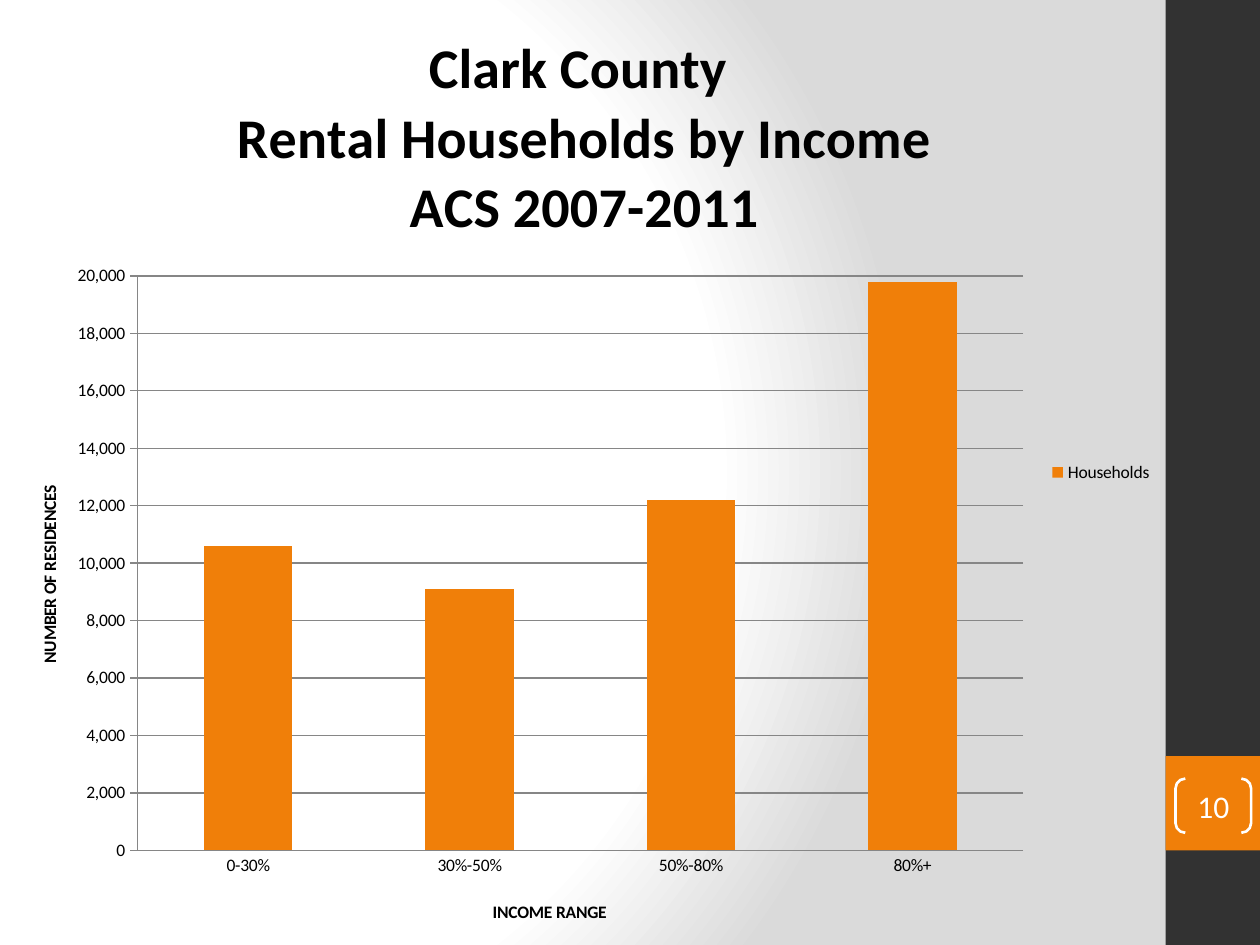
"""Build a slide with a column chart of rental households by income."""
from dataclasses import dataclass

from pptx import Presentation
from pptx.chart.data import CategoryChartData
from pptx.dml.color import RGBColor
from pptx.enum.chart import XL_CHART_TYPE, XL_LEGEND_POSITION, XL_TICK_MARK
from pptx.enum.shapes import MSO_SHAPE
from pptx.enum.text import MSO_ANCHOR, PP_ALIGN
from pptx.oxml import parse_xml
from pptx.oxml.ns import nsdecls
from pptx.util import Inches, Pt

COLUMN = XL_CHART_TYPE.COLUMN_CLUSTERED
RIGHT = XL_LEGEND_POSITION.RIGHT
NONE, OUT = XL_TICK_MARK.NONE, XL_TICK_MARK.OUTSIDE
RECT, BRACKET = MSO_SHAPE.RECTANGLE, MSO_SHAPE.DOUBLE_BRACKET
MIDDLE, CENTER = MSO_ANCHOR.MIDDLE, PP_ALIGN.CENTER


@dataclass(frozen=True)
class Theme:
    """Colours, font and type sizes."""
    font: str = "Calibri"
    ink: str = "000000"
    dark: str = "323232"
    accent: str = "F07F09"
    light: str = "FFFFFF"
    shade: str = "DADADA"
    rule: str = "868686"
    title: int = 32
    number: int = 18
    label: int = 10


def rgb(color):
    """Turn a hex string into a colour."""
    return RGBColor.from_string(color)


def style(font, name, size, color, bold=False):
    """Set the look of a font."""
    font.name, font.size, font.bold = name, Pt(size), bold
    font.color.rgb = rgb(color)


def write(frame, text, **look):
    """Put centred, formatted text in a frame."""
    frame.text = text
    for para in frame.paragraphs:
        para.alignment = CENTER
        for run in para.runs:
            style(run.font, **look)


def place(node, index, inner=False, **spots):
    """Give a chart part a manual layout in fractions of the chart."""
    for old in node.xpath("c:layout"):
        node.remove(old)
    target = '<c:layoutTarget val="inner"/>' if inner else ""
    modes = '<c:xMode val="edge"/><c:yMode val="edge"/>'
    sizes = "".join(f'<c:{key} val="{val}"/>' for key, val in spots.items())
    node.insert(index, parse_xml(
        f'<c:layout {nsdecls("c")}><c:manualLayout>{target}{modes}{sizes}'
        "</c:manualLayout></c:layout>"))


class Deck:
    """Hold the theme and the current slide."""

    def __init__(self, show, theme):
        """Add a blank slide."""
        self.theme = theme
        self.slide = show.slides.add_slide(show.slide_layouts[6])

    def glow(self):
        """Fill the background with a round gradient."""
        look = self.theme
        self.slide.background.fill.solid()
        flat = self.slide.element.xpath(".//p:bgPr/a:solidFill")[0]
        stops = ((0, look.light), (75, look.light), (100, look.shade))
        marks = "".join(f'<a:gs pos="{pos * 1000}"><a:srgbClr val="{color}"/></a:gs>'
                        for pos, color in stops)
        flat.getparent().replace(flat, parse_xml(
            f'<a:gradFill {nsdecls("a")} rotWithShape="1"><a:gsLst>{marks}</a:gsLst>'
            '<a:path path="circle"><a:fillToRect l="20000" t="50000" r="100000"'
            ' b="50000"/></a:path></a:gradFill>'))

    def shape(self, kind, box):
        """Add a bare shape."""
        item = self.slide.shapes.add_shape(kind, *map(Inches, box))
        item.shadow.inherit = False
        item.fill.background()
        item.line.fill.background()
        return item

    def block(self, box, color):
        """Add a filled rectangle."""
        item = self.shape(RECT, box)
        item.fill.solid()
        item.fill.fore_color.rgb = rgb(color)

    def number(self, text, box):
        """Add a slide number in brackets."""
        look = self.theme
        item = self.shape(BRACKET, box)
        item.adjustments[0] = 0.18
        item.line.color.rgb = rgb(look.light)
        item.line.width = Pt(1.5)
        frame = item.text_frame
        frame.margin_left = frame.margin_right = 0
        frame.margin_top = frame.margin_bottom = 0
        frame.vertical_anchor = MIDDLE
        write(frame, text, name=look.font, size=look.number, color=look.light)

    def head(self, owner, text, size, x, y):
        """Title a chart or an axis."""
        look = self.theme
        part = owner.has_title and owner
        if not part:
            owner.has_title = True
        title = getattr(owner, "chart_title", None) or owner.axis_title
        write(title.text_frame, text, name=look.font, size=size,
              color=look.ink, bold=True)
        place(title._element, 1, x=x, y=y)

    def axis(self, axis, tick):
        """Set the line and tick marks of an axis."""
        axis.major_tick_mark, axis.minor_tick_mark = tick, NONE
        axis.format.line.color.rgb = rgb(self.theme.rule)

    def chart(self, box, names, series, values):
        """Add the column chart and return it."""
        look = self.theme
        data = CategoryChartData(number_format="#,##0")
        data.categories = names
        data.add_series(series, values)
        chart = self.slide.shapes.add_chart(COLUMN, *map(Inches, box), data).chart
        style(chart.font, look.font, look.label, look.ink)
        plot = chart.plots[0]
        plot.gap_width, plot.vary_by_categories = 150, False
        fill = plot.series[0].format.fill
        fill.solid()
        fill.fore_color.rgb = rgb(look.accent)
        chart.has_legend = True
        chart.legend.position = RIGHT
        chart.legend.include_in_layout = False
        self.axis(chart.category_axis, NONE)
        scale = chart.value_axis
        self.axis(scale, OUT)
        scale.minimum_scale, scale.maximum_scale, scale.major_unit = 0, 20000, 2000
        scale.has_major_gridlines = True
        scale.major_gridlines.format.line.color.rgb = rgb(look.rule)
        area = chart._chartSpace.xpath(".//c:plotArea")[0]
        place(area, 0, inner=True, x=0.118, y=0.292, w=0.76, h=0.608)
        return chart


def main():
    """Draw the slide and save it."""
    show = Presentation()
    show.slide_width, show.slide_height = Inches(10), Inches(7.5)
    look = Theme()
    deck = Deck(show, look)
    deck.glow()
    deck.block((9.25, 0, 0.75, 7.5), look.dark)
    deck.block((9.25, 6, 0.75, 0.75), look.accent)
    deck.number("10", (9.33, 6.18, 0.6, 0.43))
    chart = deck.chart((0, 0, 9.25, 7.5), ("0-30%", "30%-50%", "50%-80%", "80%+"),
                       "Households", (10600, 9100, 12200, 19800))
    deck.head(chart, "Clark County \nRental Households by Income\nACS 2007-2011",
              look.title, 0.2, 0.03)
    deck.head(chart.category_axis, "INCOME RANGE", look.label, 0.42, 0.95)
    deck.head(chart.value_axis, "NUMBER OF RESIDENCES", look.label, 0.03, 0.51)
    show.save("out.pptx")


if __name__ == "__main__":
    main()
